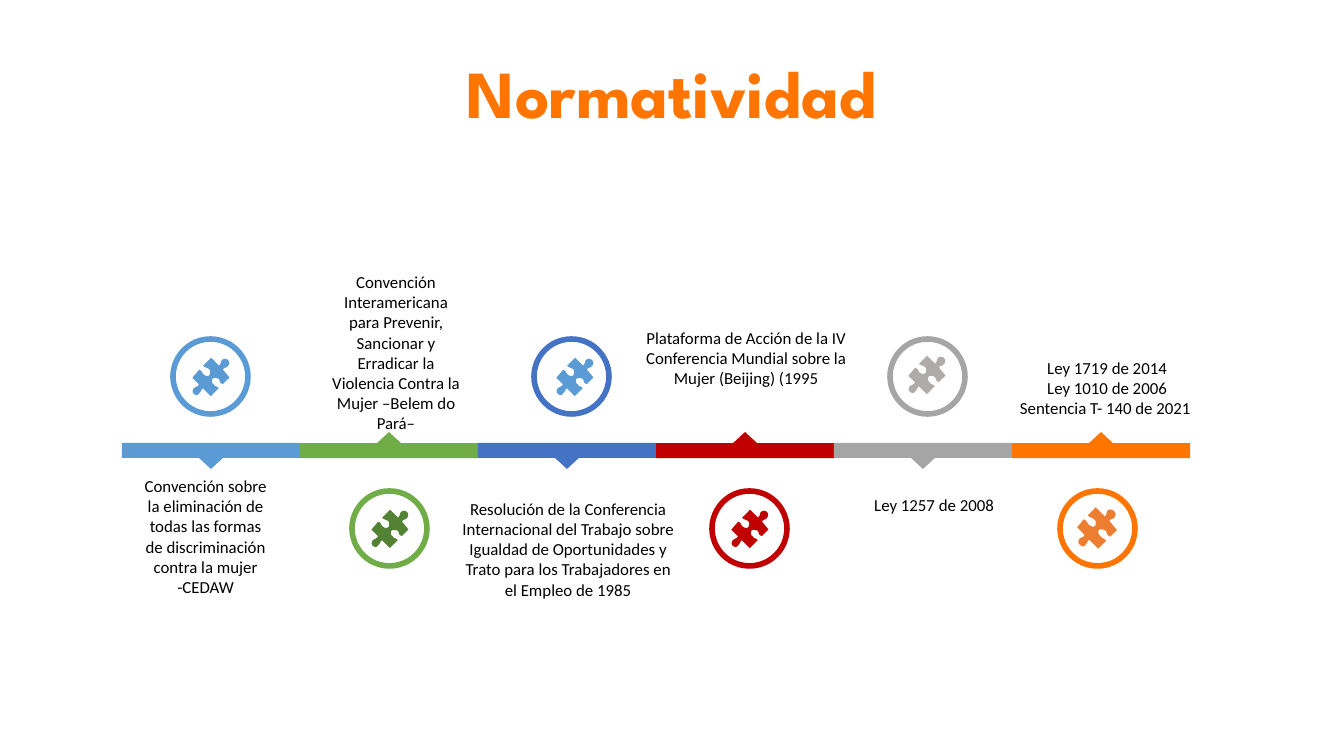
import math
from dataclasses import dataclass

from pptx import Presentation
from pptx import util as u
from pptx.dml.color import RGBColor
from pptx.enum import shapes, text

PX = 914400 / 134.4  # EMU in one px
COLORS = {
    "sky": "5B9BD5", "green": "70AD47", "forest": "548235", "blue": "4472C4",
    "red": "C00000", "gray": "A5A5A5", "ash": "AFABAB", "orange": "FF7500",
    "rust": "ED7D31", "black": "000000",
}
BAR_LEFT, BAR_TOP, BAR_W, BAR_H, TIP = 122, 443, 178, 15, 11
RING = 75
RING_ABOVE, RING_BELOW = 339, 491

# Puzzle piece around its centre: 2 numbers are a line, 6 numbers a curve.
PUZZLE = [
    (13, -12), (14, -11, 14, -9, 13, -8), (12, -6, 10, -7, 9, -5),
    (14, 1), (9, 6), (6, 5, 7, 3, 6, 2), (4, 1, 2, 1, 1, 2),
    (1, 3, 0, 5, 2, 6), (3, 8, 4, 7, 6, 9), (0, 15), (-6, 9),
    (-8, 11, -7, 11, -9, 13), (-10, 15, -12, 14, -13, 13),
    (-14, 12, -14, 11, -13, 9), (-12, 8, -10, 8, -9, 6),
    (-14, 1), (-9, -5), (-6, -4, -7, -2, -5, -1), (-4, 0, -2, 0, -1, -1),
    (-1, -2, 0, -4, -1, -5), (-3, -7, -4, -6, -6, -8), (0, -14), (6, -8),
    (8, -10, 7, -10, 8, -12), (10, -14, 12, -13, 13, -12),
]


@dataclass
class Milestone:
    color: str
    icon_color: str
    ring_x: int
    icon: tuple[int, int]  # centre
    box: tuple[int, int, int, int]
    label: str
    icon_w: int = 27


MILESTONES = [
    Milestone("sky", "sky", 173, (211, 377), (131, 469, 149, 156),
              "Convención sobre la eliminación de todas las formas de "
              "discriminación contra la mujer -CEDAW"),
    Milestone("green", "forest", 352, (390, 529), (316, 265, 160, 176),
              "Convención Interamericana para Prevenir, Sancionar y Erradicar "
              "la Violencia Contra la Mujer –Belem do Pará–"),
    Milestone("blue", "sky", 534, (575, 377), (448, 492, 240, 136),
              "Resolución de la Conferencia Internacional del Trabajo sobre "
              "Igualdad de Oportunidades y Trato para los Trabajadores en el "
              "Empleo de 1985"),
    Milestone("red", "red", 712, (750, 529), (626, 321, 240, 75),
              "Plataforma de Acción de la IV Conferencia Mundial sobre la "
              "Mujer (Beijing) (1995"),
    Milestone("gray", "ash", 890, (927, 375), (829, 488, 214, 34),
              "Ley 1257 de 2008 "),
    Milestone("orange", "rust", 1060, (1097, 528), (992, 351, 230, 95),
              "Ley 1719 de 2014\nLey 1010 de 2006\nSentencia T- 140 de 2021 ",
              icon_w=31),
]


def px(n: float) -> u.Emu:
    return u.Emu(round(n * PX))


def rgb(name: str) -> RGBColor:
    return RGBColor.from_string(COLORS[name])


def puzzle_points(steps: int = 5) -> list[tuple[float, float]]:
    """Flatten the curves and turn the piece upright."""
    points = []
    for seg in PUZZLE:
        if len(seg) == 2:
            points.append(seg)
            continue
        x0, y0 = points[-1]
        x1, y1, x2, y2, x3, y3 = seg
        for i in range(1, steps + 1):
            t = i / steps
            a, b, c, d = (1 - t) ** 3, 3 * t * (1 - t) ** 2, 3 * t * t * (1 - t), t ** 3
            points.append((a * x0 + b * x1 + c * x2 + d * x3,
                           a * y0 + b * y1 + c * y2 + d * y3))
    k = math.sqrt(0.5)
    return [((x + y) * k, (y - x) * k) for x, y in points]


def add_outline(s, points, color: str, box, rotation: int) -> None:
    """Draw a filled polygon fitted to box."""
    # Fine units keep rounding in the outline small.
    pts = [(round(x * 100), round(y * 100)) for x, y in points]
    fb = s.shapes.build_freeform(*pts[0], scale=PX / 100)
    fb.add_line_segments(pts[1:], close=True)
    sp = fb.convert_to_shape()
    sp.left, sp.top, sp.width, sp.height = map(px, box)
    sp.rotation = rotation
    sp.shadow.inherit = False
    sp.fill.solid()
    sp.fill.fore_color.rgb = rgb(color)
    sp.line.fill.background()


def add_bar(s, i: int, color: str, up: bool) -> None:
    mid, half = BAR_W / 2, 12
    points = [(0, 0), (BAR_W, 0), (BAR_W, BAR_H), (mid + half, BAR_H),
              (mid, BAR_H + TIP), (mid - half, BAR_H), (0, BAR_H)]
    box = (BAR_LEFT + i * BAR_W, BAR_TOP - TIP * up, BAR_W, BAR_H + TIP)
    add_outline(s, points, color, box, 180 if up else 0)


def add_ring(s, x: int, y: int, color: str) -> None:
    sp = s.shapes.add_shape(shapes.MSO_SHAPE.OVAL, px(x), px(y), px(RING), px(RING))
    sp.shadow.inherit = False
    sp.fill.background()
    sp.line.color.rgb = rgb(color)
    sp.line.width = u.Pt(3)


def add_icon(s, m: Milestone) -> None:
    (cx, cy), w, h = m.icon, m.icon_w, 48
    add_outline(s, puzzle_points(), m.icon_color, (cx - w / 2, cy - h / 2, w, h), 45)


def format_text(tf, font: str, size: int, color: str, bold: bool = False) -> None:
    for p in tf.paragraphs:
        p.alignment = text.PP_ALIGN.CENTER
        for r in p.runs:
            r.font.name, r.font.size, r.font.bold = font, u.Pt(size), bold
            r.font.color.rgb = rgb(color)


def add_label(s, m: Milestone) -> None:
    tf = s.shapes.add_textbox(*map(px, m.box)).text_frame
    tf.word_wrap = True
    tf.text = m.label
    format_text(tf, "Calibri", 9, "black")


def set_title(s) -> None:
    sp = s.shapes.title
    sp.left, sp.top, sp.width, sp.height = map(px, (434, 52, 476, 87))
    tf = sp.text_frame
    tf.text = "Normatividad"
    tf.word_wrap = False
    tf.auto_size = text.MSO_AUTO_SIZE.NONE
    tf.vertical_anchor = text.MSO_ANCHOR.TOP
    tf.paragraphs[0].line_spacing = u.Pt(39.4)
    format_text(tf, "League Spartan", 36, "orange", bold=True)


def main() -> None:
    prs = Presentation()
    prs.slide_width, prs.slide_height = px(1344), px(756)
    s = prs.slides.add_slide(prs.slide_layouts[5])
    set_title(s)
    for i, m in enumerate(MILESTONES):
        up = i % 2 == 1
        add_bar(s, i, m.color, up)
        add_ring(s, m.ring_x, RING_BELOW if up else RING_ABOVE, m.color)
        add_icon(s, m)
        add_label(s, m)
    prs.save("out.pptx")


if __name__ == "__main__":
    main()
